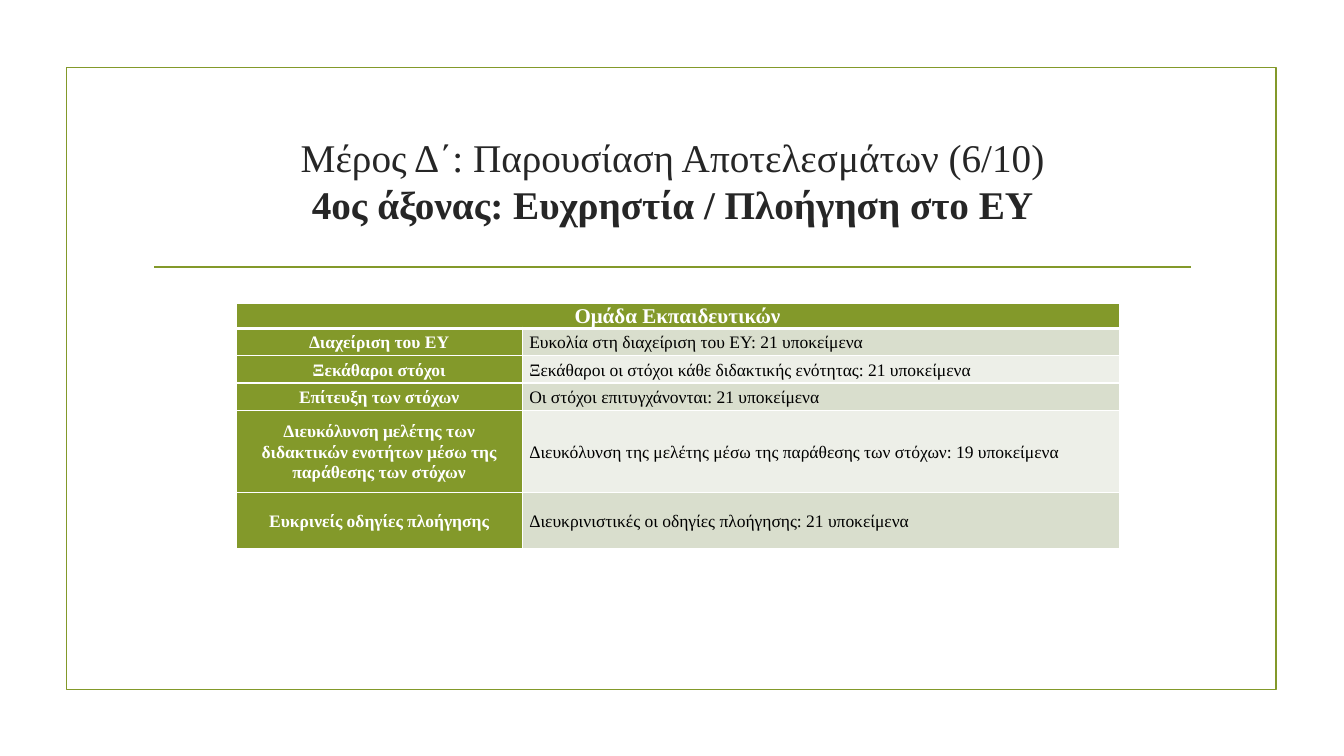
from lxml import etree
from pptx import Presentation
from pptx.dml.color import RGBColor
from pptx.enum.shapes import MSO_CONNECTOR, MSO_SHAPE
from pptx.enum.text import MSO_ANCHOR, MSO_AUTO_SIZE, PP_ALIGN
from pptx.oxml.ns import qn
from pptx.util import Inches, Pt

CENTER, LEFT = PP_ALIGN.CENTER, PP_ALIGN.LEFT
MIDDLE = MSO_ANCHOR.MIDDLE
FONT = "Times New Roman"
COLORS = {"green": "83992A", "dark": "262626", "white": "FFFFFF",
          "black": "000000", "band": "D9DECD", "light": "EDEFE8"}
RGB = {name: RGBColor.from_string(value) for name, value in COLORS.items()}


def add_run(p, text, size, color, bold):
    r = p.add_run()
    r.text = text
    for name, value in {"name": FONT, "size": Pt(size), "bold": bold}.items():
        setattr(r.font, name, value)
    r.font.color.rgb = RGB[color]


def format_cell(cell, text, size, color, bold, fill, align, bottom=1):
    """Write the text, then the white borders, then the fill."""
    margins = {"margin_left": 0.07, "margin_right": 0.07, "margin_top": 0, "margin_bottom": 0}
    for name, value in margins.items():
        setattr(cell, name, Inches(value))
    cell.vertical_anchor = MIDDLE
    p = cell.text_frame.paragraphs[0]
    p.alignment, p.line_spacing = align, 1.07
    add_run(p, text, size, color, bold)
    tc_pr = cell._tc.get_or_add_tcPr()
    for side, width in {"lnL": 1, "lnR": 1, "lnT": 1, "lnB": bottom}.items():
        ln = etree.SubElement(tc_pr, qn(f"a:{side}"), w=str(Pt(width)))
        solid = etree.SubElement(ln, qn("a:solidFill"))
        etree.SubElement(solid, qn("a:srgbClr"), val=COLORS["white"])
    cell.fill.solid()
    cell.fill.fore_color.rgb = RGB[fill]


prs = Presentation()
prs.slide_width, prs.slide_height = Inches(13.33), Inches(7.5)
s = prs.slides.add_slide(prs.slide_layouts[5])

# Frame and rule
frame = s.shapes.add_shape(MSO_SHAPE.RECTANGLE, Inches(0.66), Inches(0.67), Inches(12), Inches(6.17))
frame.shadow.inherit = False
frame.fill.background()
rule = s.shapes.add_connector(MSO_CONNECTOR.STRAIGHT, Inches(1.53), Inches(2.65), Inches(11.81), Inches(2.65))
etree.SubElement(rule._element.spPr, qn("a:effectLst"))
for sp in (frame, rule):
    sp.line.color.rgb = RGB["green"]
    sp.line.width = Pt(1.25)

# Title
title = s.shapes.title
title.left, title.top, title.width, title.height = Inches(1.42), Inches(1.07), Inches(10.5), Inches(1.43)
tf = title.text_frame
tf.word_wrap, tf.auto_size, tf.vertical_anchor = True, MSO_AUTO_SIZE.NONE, MIDDLE
p = tf.paragraphs[0]
p.alignment = CENTER
add_run(p, "Μέρος Δ΄: Παρουσίαση Αποτελεσμάτων (6/10)", 28, "dark", False)
p.add_line_break()
add_run(p, "4ος άξονας: Ευχρηστία / Πλοήγηση στο ΕΥ", 28, "dark", True)

# Results table
results = [
    ("Διαχείριση του ΕΥ", "Ευκολία στη διαχείριση του ΕΥ: 21 υποκείμενα"),
    ("Ξεκάθαροι στόχοι", "Ξεκάθαροι οι στόχοι κάθε διδακτικής ενότητας: 21 υποκείμενα"),
    ("Επίτευξη των στόχων", "Οι στόχοι επιτυγχάνονται: 21 υποκείμενα"),
    ("Διευκόλυνση μελέτης των διδακτικών ενοτήτων μέσω της παράθεσης των στόχων",
     "Διευκόλυνση της μελέτης μέσω της παράθεσης των στόχων: 19 υποκείμενα"),
    ("Ευκρινείς οδηγίες πλοήγησης", "Διευκρινιστικές οι οδηγίες πλοήγησης: 21 υποκείμενα"),
]
row_heights = [0.25, 0.27, 0.27, 0.27, 0.82, 0.55]
table = s.shapes.add_table(len(row_heights), 2, Inches(2.34), Inches(3.01),
                           Inches(8.76), Inches(sum(row_heights))).table
for column, width in zip(table.columns, (2.84, 5.92)):
    column.width = Inches(width)
for row, height in zip(table.rows, row_heights):
    row.height = Inches(height)

header = table.cell(0, 0)
header.merge(table.cell(0, 1))
format_cell(header, "Ομάδα Εκπαιδευτικών", 15, "white", True, "green", CENTER, bottom=3)
for i, (topic, finding) in enumerate(results, start=1):
    format_cell(table.cell(i, 0), topic, 12.5, "white", True, "green", CENTER)
    format_cell(table.cell(i, 1), finding, 12.5, "black", False, "band" if i % 2 else "light", LEFT)

prs.save("out.pptx")
